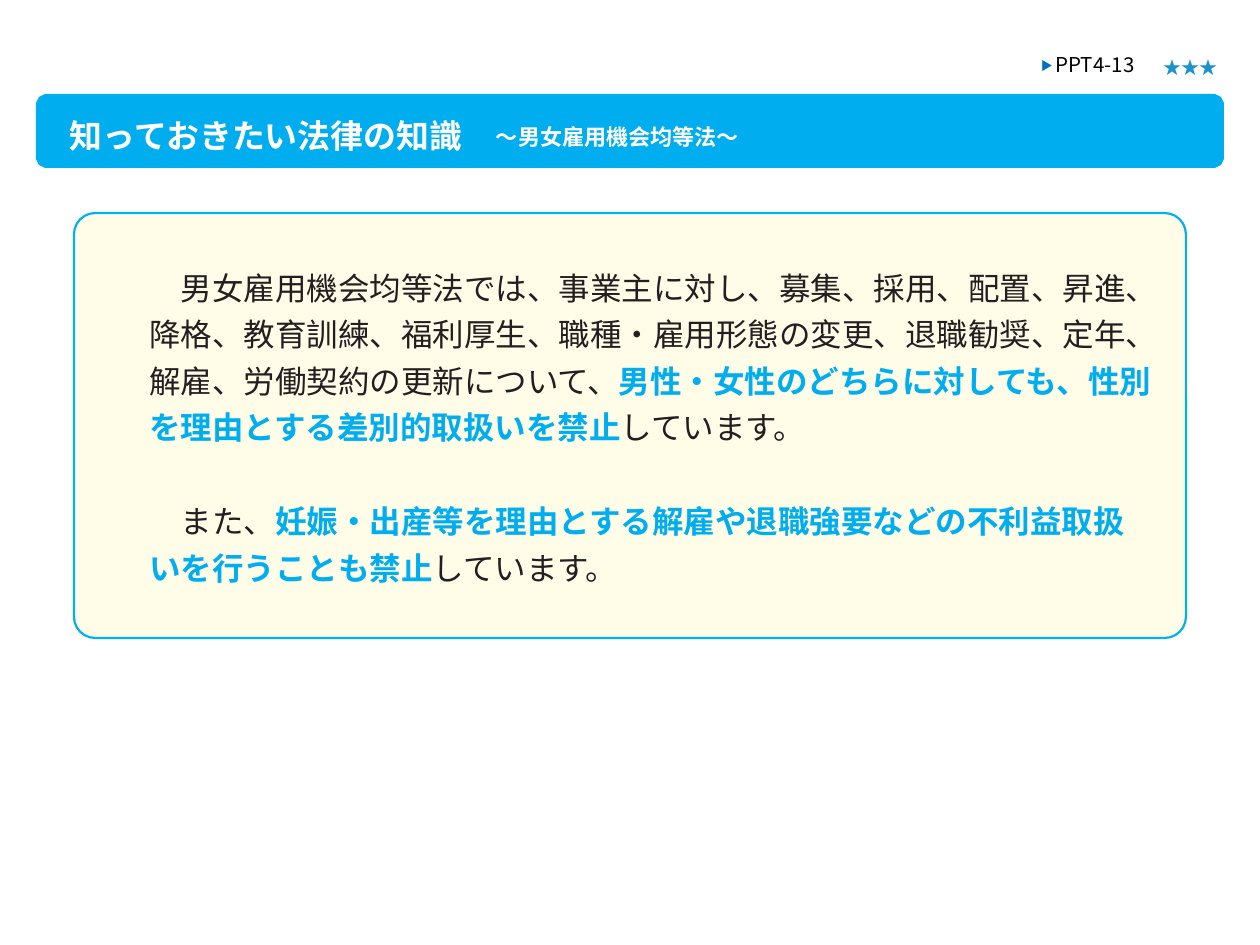
import pptx
import pptx.dml.color
import pptx.enum.shapes
import pptx.enum.text
import pptx.util
from pptx.oxml.ns import qn

PX = 914400 // 126
FONT = "Noto Sans CJK JP"
BRIGHT_BLUE = "00AEEF"
BODY_BLACK = "231F20"


def px(*lengths):
    return [pptx.util.Emu(length * PX) for length in lengths]


def colour(value):
    return pptx.dml.color.RGBColor.from_string(value)


def paint(shape, fill, line=None):
    shape.shadow.inherit = False
    shape.fill.solid()
    shape.fill.fore_color.rgb = colour(fill)
    if line:
        shape.line.color.rgb = colour(line)
        shape.line.width = pptx.util.Pt(1.25)
    else:
        shape.line.fill.background()


def add_banner(slide, left, top, right, bottom):
    """Bar whose four corners are cut by the same mirrored steps."""
    steps = [(20, 0), (9, 0), (3, 3), (0, 9), (0, 20)]
    upper_left = [(left + x, top + y) for x, y in steps]
    lower_left = [(left + x, bottom - y) for x, y in reversed(steps)]
    left_side = upper_left + lower_left
    right_side = [(left + right - x, y) for x, y in reversed(left_side)]
    outline = left_side + right_side
    builder = slide.shapes.build_freeform(*outline[0], scale=PX)
    builder.add_line_segments(outline[1:], close=True)
    paint(builder.convert_to_shape(), BRIGHT_BLUE)


def add_panel(slide, *box):
    panel = slide.shapes.add_shape(
        pptx.enum.shapes.MSO_SHAPE.ROUNDED_RECTANGLE, *px(*box))
    panel.adjustments[0] = 0.05
    paint(panel, "FFFDE8", "00B0F0")


def set_frame(shape, top_inset=1, wrap=True):
    frame = shape.text_frame
    frame.margin_left = frame.margin_right = frame.margin_bottom = 0
    frame.margin_top = px(top_inset)[0]
    frame.vertical_anchor = pptx.enum.text.MSO_ANCHOR.TOP
    frame.auto_size = pptx.enum.text.MSO_AUTO_SIZE.NONE
    frame.word_wrap = wrap
    return frame


def add_text_box(slide, *box, **frame_options):
    return set_frame(slide.shapes.add_textbox(*px(*box)), **frame_options)


def place_title(slide, *box):
    """Move the title placeholder to the box, in front of the banner."""
    title = slide.shapes.title
    title.left, title.top, title.width, title.height = px(*box)
    slide.shapes._spTree.append(title._element)
    return set_frame(title, top_inset=2)


def write_runs(paragraph, runs):
    """Each run is (text, size, colour, bold, baseline in percent)."""
    paragraph.alignment = pptx.enum.text.PP_ALIGN.LEFT
    for text, size, hue, bold, baseline in runs:
        run = paragraph.add_run()
        run.text = text
        font = run.font
        font.name = FONT
        font.size = pptx.util.Pt(size)
        font.bold = bold
        font.color.rgb = colour(hue)
        properties = font._element
        if baseline:
            properties.set("baseline", str(baseline * 1000))
        east_asian = properties.makeelement(qn("a:ea"), {"typeface": FONT})
        properties.find(qn("a:latin")).addnext(east_asian)


def write_law_paragraph(paragraph, opening, emphasis, closing):
    paragraph.line_spacing = pptx.util.Pt(26.6)
    write_runs(paragraph, [
        (opening, 18, BODY_BLACK, False, 0),
        (emphasis, 18, BRIGHT_BLUE, True, 0),
        (closing, 18, BODY_BLACK, False, 0),
    ])


def main():
    presentation = pptx.Presentation()
    presentation.slide_width, presentation.slide_height = px(1260, 945)
    slide = presentation.slides.add_slide(presentation.slide_layouts[5])

    add_panel(slide, 74, 213, 1112, 425)
    add_banner(slide, 36, 94, 1224, 168)

    title = place_title(slide, 70, 108, 806, 42)
    write_runs(title.paragraphs[0], [
        ("知っておきたい法律の知識　", 18.8, "FFFFFF", True, 0),
        ("～男女雇用機会均等法～", 21.8, "FFFFFF", True, 7),
    ])

    law = add_text_box(slide, 149, 259, 1002, 324)
    write_law_paragraph(
        law.paragraphs[0],
        "　男女雇用機会均等法では、事業主に対し、募集、採用、配置、昇進、"
        "降格、教育訓練、福利厚生、職種・雇用形態の変更、退職勧奨、定年、"
        "解雇、労働契約の更新について、",
        "男性・女性のどちらに対しても、性別を理由とする差別的取扱いを禁止",
        "しています。")
    pregnancy = law.add_paragraph()
    pregnancy.space_before = pptx.util.Pt(27)
    write_law_paragraph(
        pregnancy,
        "　また、",
        "妊娠・出産等を理由とする解雇や退職強要などの不利益取扱いを行うことも禁止",
        "しています。")

    slide_code = add_text_box(slide, 1041, 51, 125, 27)
    write_runs(slide_code.paragraphs[0], [
        ("▶ ", 11.7, "0070C0", False, 9),
        ("PPT4-13", 11.7, "000000", False, 0),
    ])
    rating = add_text_box(slide, 1164, 50, 60, 34, top_inset=6, wrap=False)
    write_runs(rating.paragraphs[0], [("★★★", 10.3, "1B93C9", False, 0)])

    presentation.save("out.pptx")


if __name__ == "__main__":
    main()
